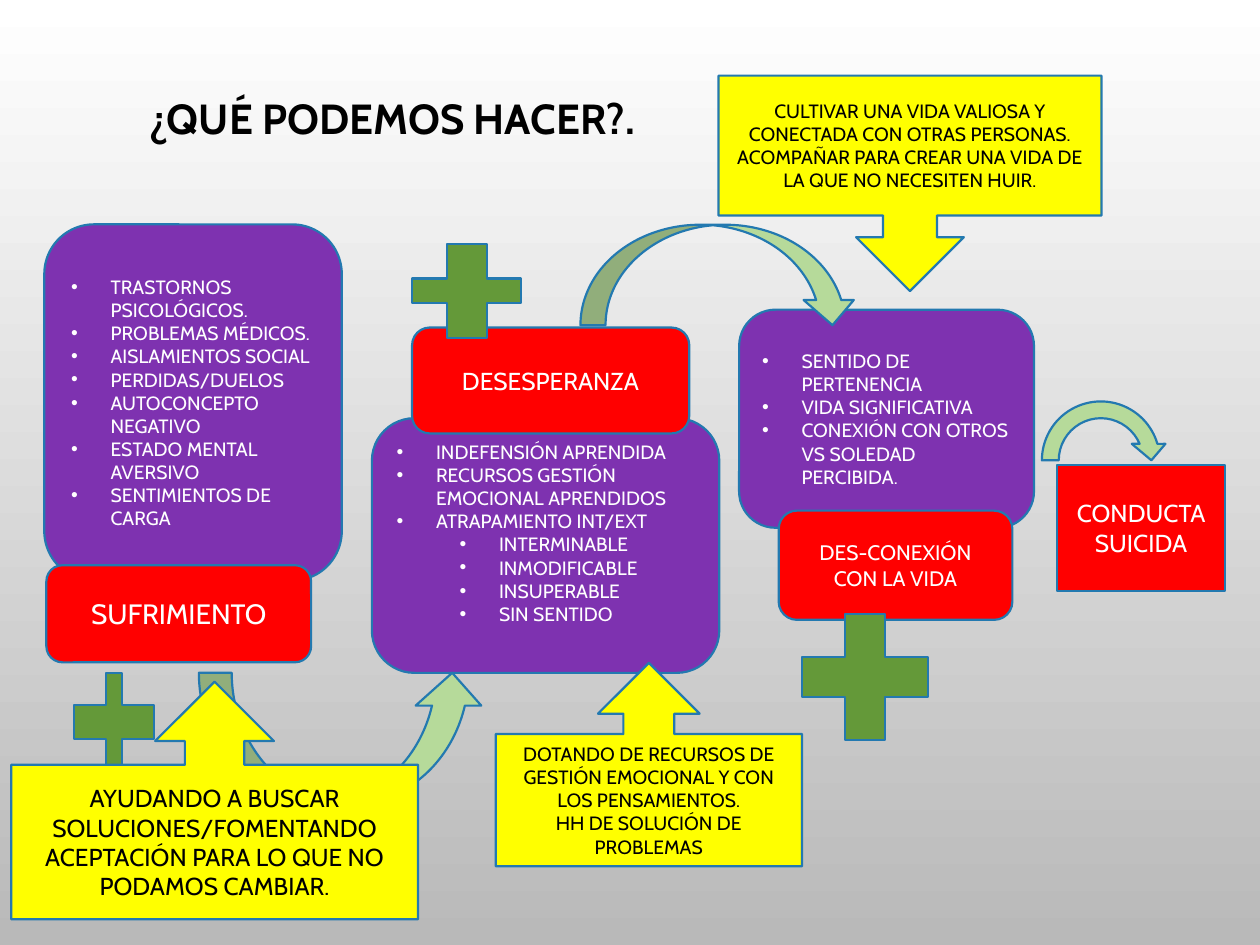
"""Build the slide on what can be done at each step of the path towards suicidal conduct."""
from dataclasses import dataclass
from typing import Optional

from lxml.etree import SubElement
from pptx import Presentation
from pptx.dml.color import RGBColor
from pptx.enum.shapes import MSO_SHAPE
from pptx.enum.text import MSO_ANCHOR, PP_ALIGN
from pptx.oxml.ns import qn
from pptx.util import Pt

FONT = "Cabin"
BLACK, WHITE = "000000", "FFFFFF"
PURPLE, RED, YELLOW = "7E32B0", "FF0000", "FFFF00"
LIGHT_GREEN, GREEN, OUTLINE = "B6DA9A", "649939", "2379B0"
HANGING = 22.5
LEVEL_STEP = 36


@dataclass(frozen=True)
class Block:
    preset: MSO_SHAPE
    frame: tuple[float, float, float, float]
    fill: str
    lines: tuple[str, ...] = ()
    size: float = 11
    color: str = WHITE
    sublines: tuple[str, ...] = ()
    bulleted: bool = False
    bottom_inset: float = 3.6
    adjustment: Optional[float] = None


def factors(frame, *lines, **options) -> Block:
    return Block(MSO_SHAPE.ROUNDED_RECTANGLE, frame, PURPLE, lines, bulleted=True, **options)


def stage(frame, label, size, preset=MSO_SHAPE.ROUNDED_RECTANGLE) -> Block:
    return Block(preset, frame, RED, (label,), size)


def transition(preset, frame) -> Block:
    return Block(preset, frame, LIGHT_GREEN)


def plus(frame, adjustment) -> Block:
    return Block(MSO_SHAPE.CROSS, frame, GREEN, adjustment=adjustment)


def advice(frame, *lines, preset=MSO_SHAPE.UP_ARROW_CALLOUT, size=11) -> Block:
    return Block(preset, frame, YELLOW, lines, size, BLACK)


BLOCKS = [
    factors((25.3, 128.2, 170, 203.6), "TRASTORNOS PSICOLÓGICOS.", "PROBLEMAS MÉDICOS.",
            "AISLAMIENTOS SOCIAL", "PERDIDAS/DUELOS", "AUTOCONCEPTO NEGATIVO",
            "ESTADO MENTAL AVERSIVO", "SENTIMIENTOS DE CARGA"),
    factors((212.5, 239, 198.5, 145.5), "INDEFENSIÓN APRENDIDA",
            "RECURSOS GESTIÓN EMOCIONAL APRENDIDOS", "ATRAPAMIENTO INT/EXT",
            sublines=("INTERMINABLE", "INMODIFICABLE", "INSUPERABLE", "SIN SENTIDO"),
            bottom_inset=18.2),
    factors((422.4, 177, 168.5, 124.6), "SENTIDO DE PERTENENCIA", "VIDA SIGNIFICATIVA",
            "CONEXIÓN CON OTROS VS SOLEDAD PERCIBIDA."),
    stage((26.5, 323, 151.3, 55.5), "SUFRIMIENTO", 16),
    stage((235.5, 187.2, 158.4, 60.5), "DESESPERANZA", 14),
    stage((445, 291.8, 133.5, 62.4), "DES-CONEXIÓN CON LA VIDA", 12),
    transition(MSO_SHAPE.CURVED_UP_ARROW, (113.7, 384.5, 163.5, 75)),
    transition(MSO_SHAPE.CURVED_DOWN_ARROW, (331.7, 128.4, 158.4, 57.4)),
    transition(MSO_SHAPE.CIRCULAR_ARROW, (590.6, 224.6, 77, 77)),
    stage((604, 265.6, 96.2, 72), "CONDUCTA SUICIDA", 14, MSO_SHAPE.RECTANGLE),
    plus((42.3, 384.5, 45.6, 56), 0.399),
    plus((235.5, 139.4, 62.4, 53.6), 0.369),
    plus((458.2, 350.8, 72, 72), 0.34),
    advice((6.4, 389.5, 232.5, 135.8),
           "AYUDANDO A BUSCAR SOLUCIONES/FOMENTANDO ACEPTACIÓN PARA LO QUE NO PODAMOS CAMBIAR.",
           size=14),
    advice((283.3, 378.8, 175, 116.2),
           "DOTANDO DE RECURSOS DE GESTIÓN EMOCIONAL Y CON LOS PENSAMIENTOS.",
           "HH DE SOLUCIÓN DE PROBLEMAS"),
    advice((410.6, 43.2, 218.8, 123.1),
           "CULTIVAR UNA VIDA VALIOSA Y CONECTADA CON OTRAS PERSONAS.",
           "ACOMPAÑAR PARA CREAR UNA VIDA DE LA QUE NO NECESITEN HUIR.",
           preset=MSO_SHAPE.DOWN_ARROW_CALLOUT),
]


def paint(target, color: str) -> None:
    target.rgb = RGBColor.from_string(color)


def write(paragraph, text: str, *, size: float, color: str, bold=False, bulleted=False,
          level=0, spacing: Optional[float] = None) -> None:
    paragraph.alignment = PP_ALIGN.LEFT if bulleted else PP_ALIGN.CENTER
    paragraph.level = level
    if spacing:
        paragraph.line_spacing = spacing
    if bulleted:
        properties = paragraph._p.get_or_add_pPr()
        properties.set("marL", str(Pt(HANGING + level * LEVEL_STEP)))
        properties.set("indent", str(Pt(-HANGING)))
        SubElement(properties, qn("a:buFont"), typeface="Arial")
        SubElement(properties, qn("a:buChar"), char="•")
    run = paragraph.add_run()
    run.text = text
    run.font.name, run.font.size, run.font.bold = FONT, Pt(size), bold
    paint(run.font.color, color)


def draw_block(slide, block: Block) -> None:
    shape = slide.shapes.add_shape(block.preset, *map(Pt, block.frame))
    shape.shadow.inherit = False
    shape.fill.solid()
    paint(shape.fill.fore_color, block.fill)
    paint(shape.line.color, OUTLINE)
    shape.line.width = Pt(1.25)
    if block.adjustment is not None:
        shape.adjustments[0] = block.adjustment
    content = shape.text_frame
    content.word_wrap = True
    content.vertical_anchor = MSO_ANCHOR.MIDDLE
    content.margin_bottom = Pt(block.bottom_inset)
    entries = [(line, 0) for line in block.lines] + [(line, 1) for line in block.sublines]
    for index, (line, level) in enumerate(entries):
        paragraph = content.add_paragraph() if index else content.paragraphs[0]
        write(paragraph, line, size=block.size, color=block.color,
              bulleted=block.bulleted, level=level)


def draw_title(slide) -> None:
    heading = slide.shapes.add_textbox(Pt(54), Pt(49), Pt(340), Pt(39.6)).text_frame
    heading.word_wrap = True
    heading.vertical_anchor = MSO_ANCHOR.MIDDLE
    write(heading.paragraphs[0], "¿QUÉ PODEMOS HACER?.", size=24, color=BLACK, bold=True,
          spacing=0.9)


def draw_background(slide) -> None:
    fill = slide.background.fill
    fill.gradient()
    fill.gradient_angle = 270
    for stop, color in zip(fill.gradient_stops, (WHITE, "B9B9B9")):
        paint(stop.color, color)


def main() -> None:
    presentation = Presentation()
    presentation.slide_width, presentation.slide_height = Pt(720), Pt(540)
    slide = presentation.slides.add_slide(presentation.slide_layouts[6])
    draw_background(slide)
    draw_title(slide)
    for block in BLOCKS:
        draw_block(slide, block)
    presentation.save("out.pptx")


if __name__ == "__main__":
    main()
